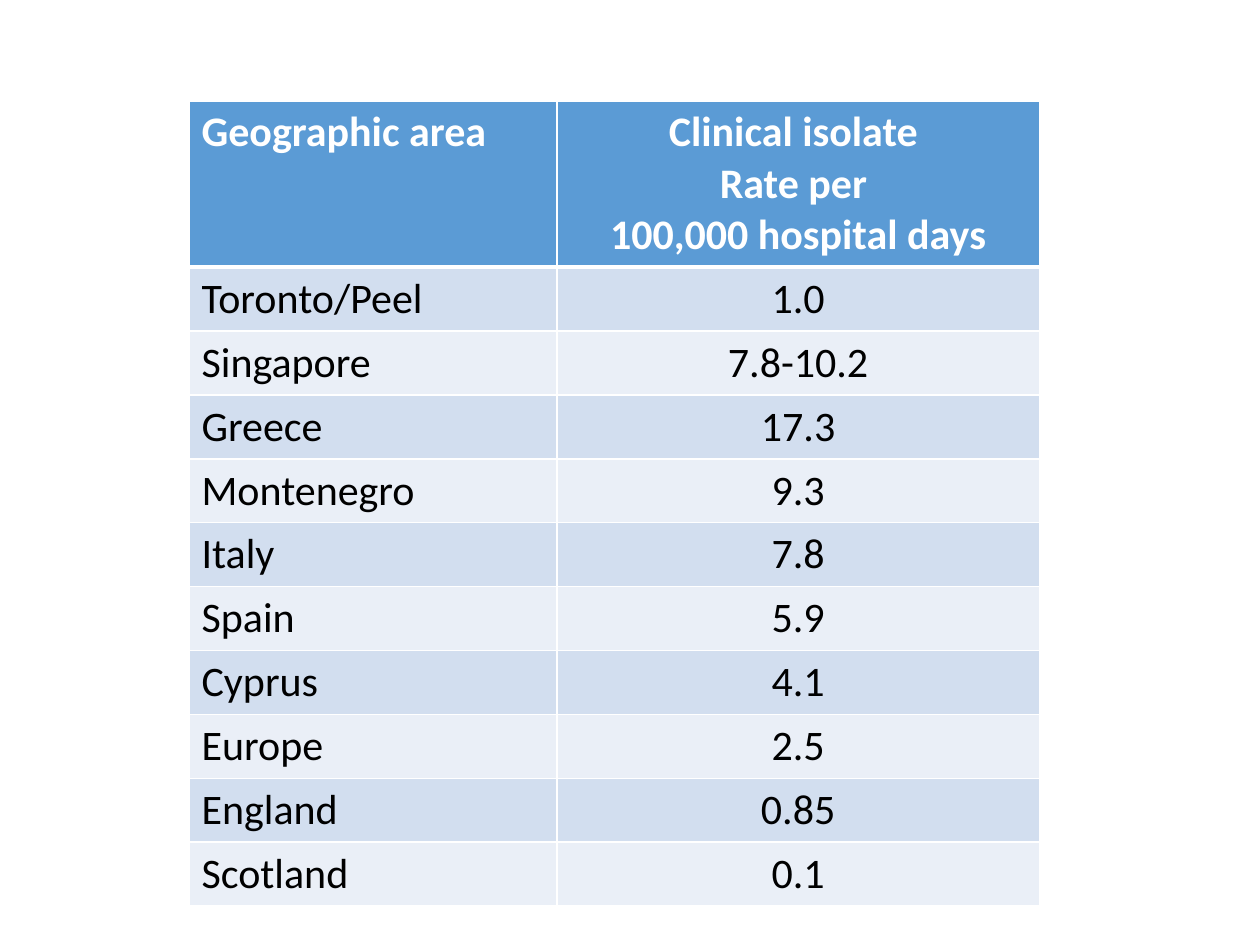
"""Build a slide with a table of clinical isolate rates by geographic area."""
from lxml import etree
from pptx import Presentation
from pptx.dml.color import RGBColor
from pptx.enum import text
from pptx.oxml import ns
from pptx.util import Inches, Pt


def paint(target, color):
    target.solid()
    target.fore_color.rgb = RGBColor.from_string(color)


def add_border(cell, side, points):
    properties = cell._tc.get_or_add_tcPr()
    line = etree.SubElement(properties, ns.qn(f"a:{side}"), w=str(Pt(points)))
    fill = etree.SubElement(line, ns.qn("a:solidFill"))
    etree.SubElement(fill, ns.qn("a:srgbClr"), val="FFFFFF")


rates = [
    ("Geographic area", "Clinical isolate \nRate per \n100,000 hospital days"),
    ("Toronto/Peel", "1.0"),
    ("Singapore", "7.8-10.2"),
    ("Greece", "17.3"),
    ("Montenegro", "9.3"),
    ("Italy", "7.8"),
    ("Spain", "5.9"),
    ("Cyprus", "4.1"),
    ("Europe", "2.5"),
    ("England", "0.85"),
    ("Scotland", "0.1"),
]

deck = Presentation()
deck.slide_width, deck.slide_height = Inches(10), Inches(7.5)
slide = deck.slides.add_slide(deck.slide_layouts[6])
rate_table = slide.shapes.add_table(
    len(rates), 2, Inches(1.5), Inches(0.8), Inches(6.75), Inches(6.3)
).table
rate_table.columns[0].width = Inches(2.92)
rate_table.columns[1].width = Inches(3.83)

for row, entries in enumerate(rates):
    header = row == 0
    rate_table.rows[row].height = Inches(1.3 if header else 0.5)
    band = "5B9BD5" if header else ("EAEFF7", "D2DEEF")[row % 2]
    for column, entry in enumerate(entries):
        cell = rate_table.cell(row, column)
        for side in ("lnL", "lnR", "lnT", "lnB"):
            under_header = (row, side) in ((0, "lnB"), (1, "lnT"))
            add_border(cell, side, 3 if under_header else 1)
        paint(cell.fill, band)
        cell.text_frame.text = entry
        for paragraph in cell.text_frame.paragraphs:
            paragraph.alignment = text.PP_ALIGN.CENTER if column else text.PP_ALIGN.LEFT
            for run in paragraph.runs:
                run.font.name = "Calibri"
                run.font.size = Pt(24)
                run.font.bold = header
                paint(run.font.fill, "FFFFFF" if header else "000000")

deck.save("out.pptx")
